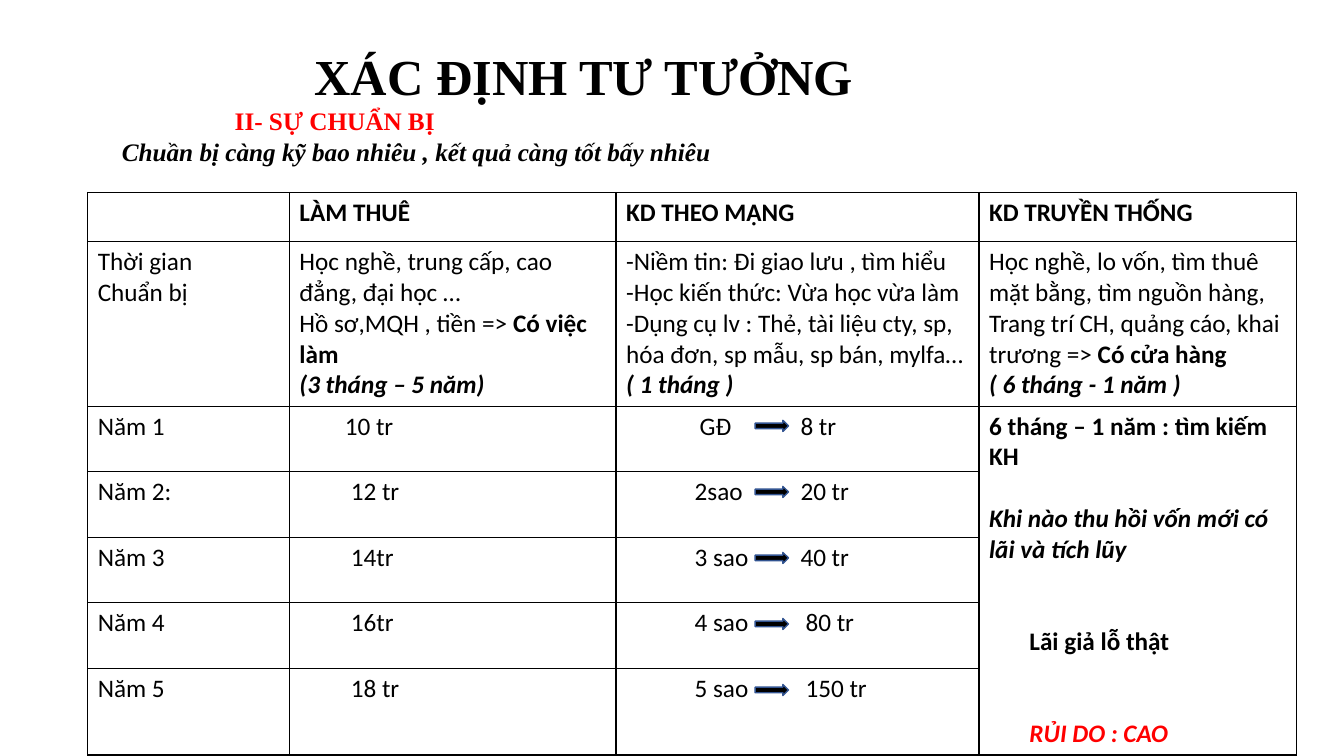
from dataclasses import dataclass

from lxml.etree import SubElement
from pptx import Presentation
from pptx.dml.color import RGBColor
from pptx.enum.shapes import MSO_SHAPE
from pptx.oxml.ns import qn
from pptx.util import Inches, Pt

COLORS = {"ink": "000000", "alert": "FF0000", "paper": "FFFFFF", "arrow_line": "325491"}


@dataclass(frozen=True)
class Span:
    text: str
    bold: bool = False
    italic: bool = False
    color: str = "ink"


@dataclass(frozen=True)
class Para:
    spans: tuple[Span, ...]
    tabs: tuple[float, ...] = ()
    before: float = 0
    line_spacing: float = 1


@dataclass(frozen=True)
class Year:
    label: str
    wage: str
    wage_tab: float
    rank: str
    rank_tab: float
    income: str
    income_tab: float


def line(text: str, bold: bool = False, italic: bool = False, color: str = "ink",
         tabs: tuple[float, ...] = (), before: float = 0, line_spacing: float = 1) -> Para:
    return Para((Span(text, bold, italic, color),), tabs, before, line_spacing)


TITLE = [line("XÁC ĐỊNH TƯ TƯỞNG", bold=True, line_spacing=1.5)]
SUBTITLE = [
    line("\tII- SỰ CHUẨN BỊ", bold=True, color="alert", tabs=(1.12,)),
    line("Chuần bị càng kỹ bao nhiêu , kết quả càng tốt bấy nhiêu", bold=True, italic=True),
]
HEADINGS = ["", "LÀM THUÊ", "KD THEO MẠNG", "KD TRUYỀN THỐNG"]
PREPARATION = [
    [line("Thời gian"), line("Chuẩn bị")],
    [
        line("Học nghề, trung cấp, cao đẳng, đại học …"),
        Para((Span("Hồ sơ,MQH , tiền => "), Span("Có việc làm", bold=True))),
        line("(3 tháng – 5 năm)", bold=True, italic=True),
    ],
    [
        line("-Niềm tin: Đi giao lưu , tìm hiểu"),
        line("-Học kiến thức: Vừa học vừa làm"),
        line("-Dụng cụ lv : Thẻ, tài liệu cty, sp, hóa đơn, sp mẫu, sp bán, mylfa…"),
        line("( 1 tháng )", bold=True, italic=True),
    ],
    [
        line("Học nghề, lo vốn, tìm thuê mặt bằng, tìm nguồn hàng,"),
        Para((Span("Trang trí CH, quảng cáo, khai trương => "), Span("Có cửa hàng", bold=True))),
        line("( 6 tháng - 1 năm )", bold=True, italic=True),
    ],
]
YEARS = [
    Year("Năm 1", "10 tr", 0.45, "GĐ", 0.73, "8 tr", 1.73),
    Year("Năm 2:", "12 tr", 0.51, "2sao", 0.68, "20 tr", 1.73),
    Year("Năm 3", "14tr", 0.51, "3 sao", 0.68, "40 tr", 1.73),
    Year("Năm 4", "16tr", 0.51, "4 sao", 0.68, "80 tr", 1.78),
    Year("Năm 5", "18 tr", 0.51, "5 sao", 0.68, "150 tr", 1.78),
]
OUTLOOK = [
    line("6 tháng – 1 năm : tìm kiếm KH", bold=True),
    line("Khi nào thu hồi vốn mới có lãi và tích lũy", bold=True, italic=True, before=22),
    line("\tLãi giả lỗ thật", bold=True, tabs=(0.4,), before=44),
    line("\tRỦI DO : CAO", bold=True, italic=True, color="alert", tabs=(0.4,), before=44),
]
COLUMN_WIDTHS = [2, 3.24, 3.6, 3.15]
ROW_HEIGHTS = [0.49, 1.63, 0.65, 0.65, 0.65, 0.65, 0.86]


def rgb(name: str) -> RGBColor:
    return RGBColor.from_string(COLORS[name])


def write(frame, paras: list[Para], font: str, size: float) -> None:
    for index, para in enumerate(paras):
        paragraph = frame.paragraphs[0] if index == 0 else frame.add_paragraph()
        if para.tabs:
            tab_list = SubElement(paragraph._p.get_or_add_pPr(), qn("a:tabLst"))
            for position in para.tabs:
                SubElement(tab_list, qn("a:tab"), pos=str(Inches(position)), algn="l")
        paragraph.line_spacing = para.line_spacing
        if para.before:
            paragraph.space_before = Pt(para.before)
        for span in para.spans:
            run = paragraph.add_run()
            run.text = span.text
            run.font.name, run.font.size = font, Pt(size)
            run.font.bold, run.font.italic = span.bold, span.italic
            run.font.color.rgb = rgb(span.color)


def add_text(slide, left: float, top: float, width: float, height: float,
             paras: list[Para], size: float) -> None:
    box = slide.shapes.add_textbox(Inches(left), Inches(top), Inches(width), Inches(height))
    box.text_frame.word_wrap = True
    write(box.text_frame, paras, "Times New Roman", size)


def style_cell(cell) -> None:
    """Give the cell thin borders on all sides and a plain fill."""
    properties = cell._tc.get_or_add_tcPr()
    for side in ("lnL", "lnR", "lnT", "lnB"):
        border = SubElement(properties, qn(f"a:{side}"), w=str(Pt(1)))
        fill = SubElement(border, qn("a:solidFill"))
        SubElement(fill, qn("a:srgbClr"), val=COLORS["ink"])
    cell.fill.solid()
    cell.fill.fore_color.rgb = rgb("paper")


def year_cells(year: Year) -> list[list[Para]]:
    return [
        [line(year.label)],
        [line(f"\t{year.wage}", tabs=(year.wage_tab,))],
        [line(f"\t{year.rank}\t{year.income}", tabs=(year.rank_tab, year.income_tab))],
    ]


def add_comparison(slide) -> None:
    rows = [[[line(heading, bold=True)] if heading else [] for heading in HEADINGS], PREPARATION]
    rows += [year_cells(year) for year in YEARS]
    rows[2].append(OUTLOOK)
    table = slide.shapes.add_table(
        len(ROW_HEIGHTS), len(COLUMN_WIDTHS), Inches(0.87), Inches(1.91),
        Inches(sum(COLUMN_WIDTHS)), Inches(sum(ROW_HEIGHTS))).table
    table.first_row = table.horz_banding = False
    for column, width in zip(table.columns, COLUMN_WIDTHS):
        column.width = Inches(width)
    for row, height in zip(table.rows, ROW_HEIGHTS):
        row.height = Inches(height)
    for cell in table.iter_cells():
        style_cell(cell)
    table.cell(2, 3).merge(table.cell(len(rows) - 1, 3))
    for row_index, row in enumerate(rows):
        for column_index, paras in enumerate(row):
            write(table.cell(row_index, column_index).text_frame, paras, "Calibri", 18)


def add_income_arrow(slide, top: float) -> None:
    arrow = slide.shapes.add_shape(
        MSO_SHAPE.RIGHT_ARROW, Inches(7.49), Inches(top), Inches(0.33), Inches(0.11))
    arrow.shadow.inherit = False
    arrow.fill.solid()
    arrow.fill.fore_color.rgb = rgb("ink")
    arrow.line.color.rgb = rgb("arrow_line")
    arrow.line.width = Pt(1)


def main() -> None:
    deck = Presentation()
    deck.slide_width, deck.slide_height = Inches(13.33), Inches(7.5)
    slide = deck.slides.add_slide(deck.slide_layouts[6])
    add_text(slide, 1.11, 1, 6.67, 0.71, SUBTITLE, 18)
    add_text(slide, 3.02, 0.1, 6.67, 0.9, TITLE, 36)
    add_comparison(slide)
    first_top, last_top = 4.17, 6.79
    step = (last_top - first_top) / (len(YEARS) - 1)
    for index in range(len(YEARS)):
        add_income_arrow(slide, first_top + index * step)
    deck.save("out.pptx")


if __name__ == "__main__":
    main()
